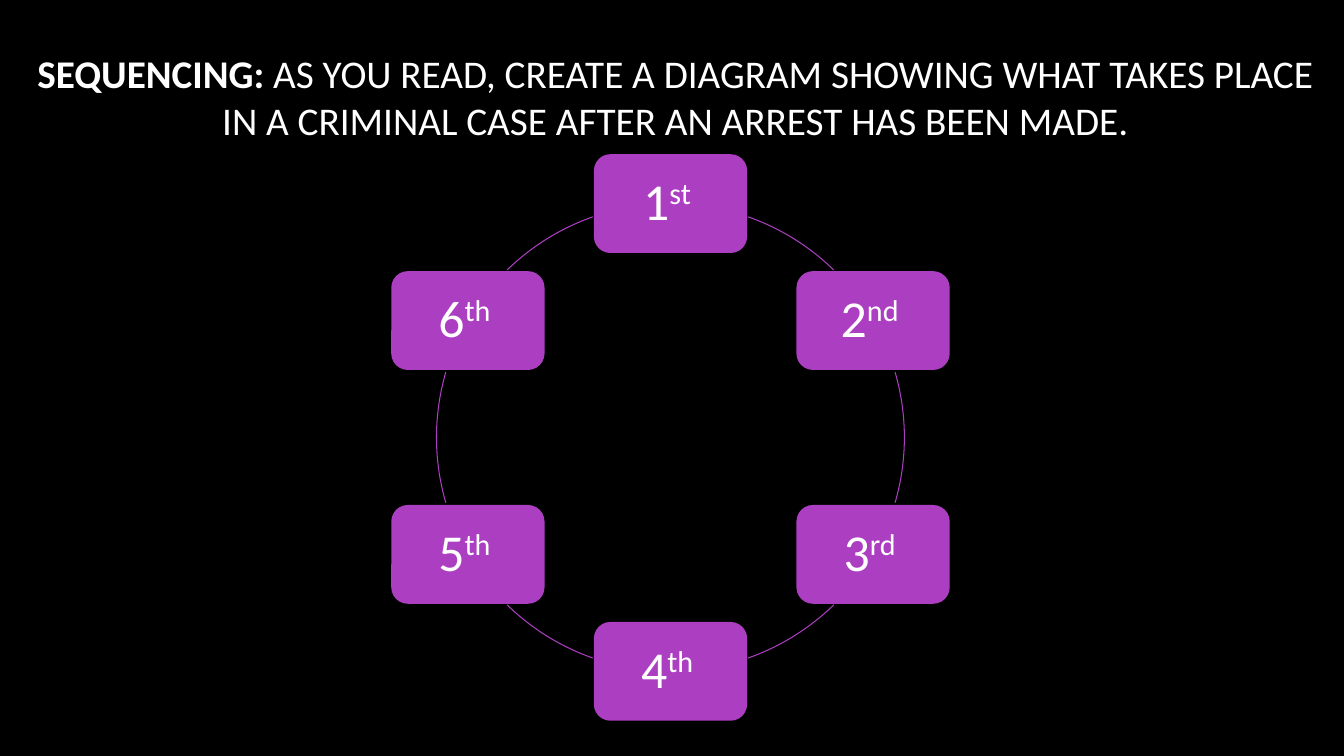
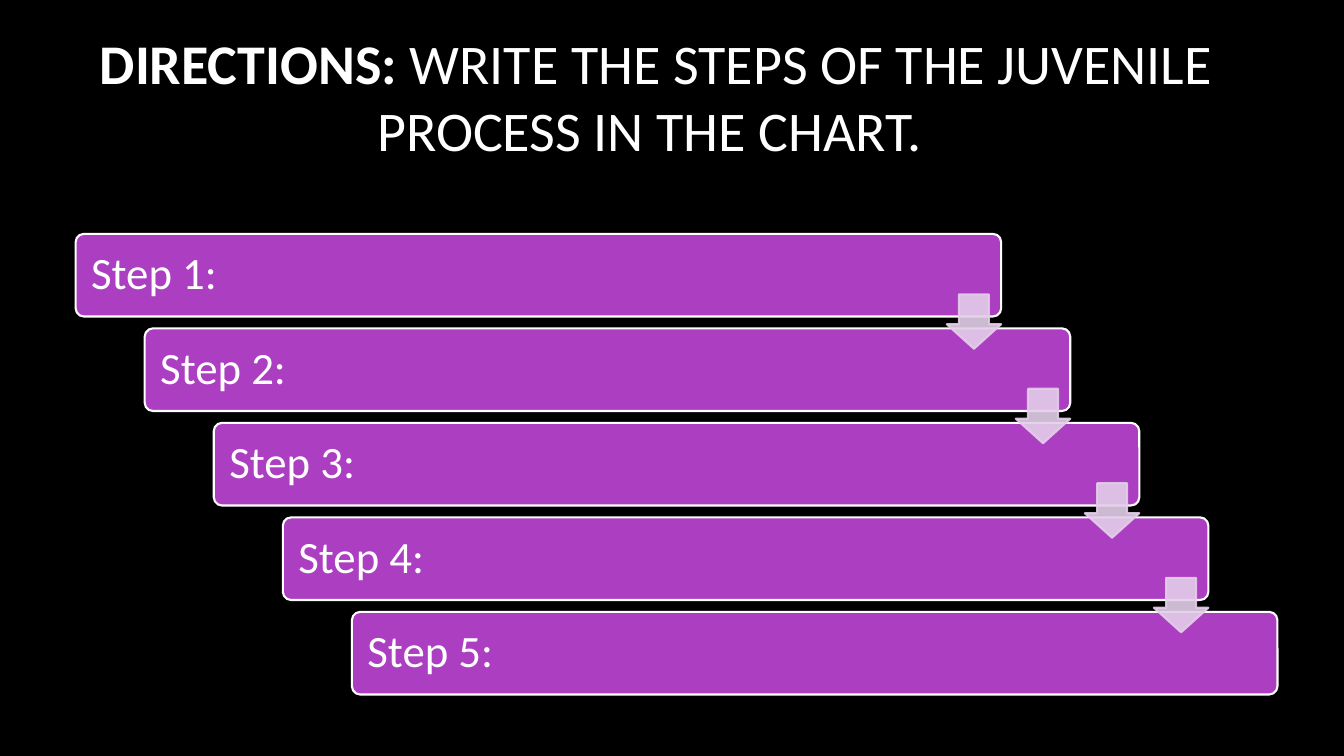
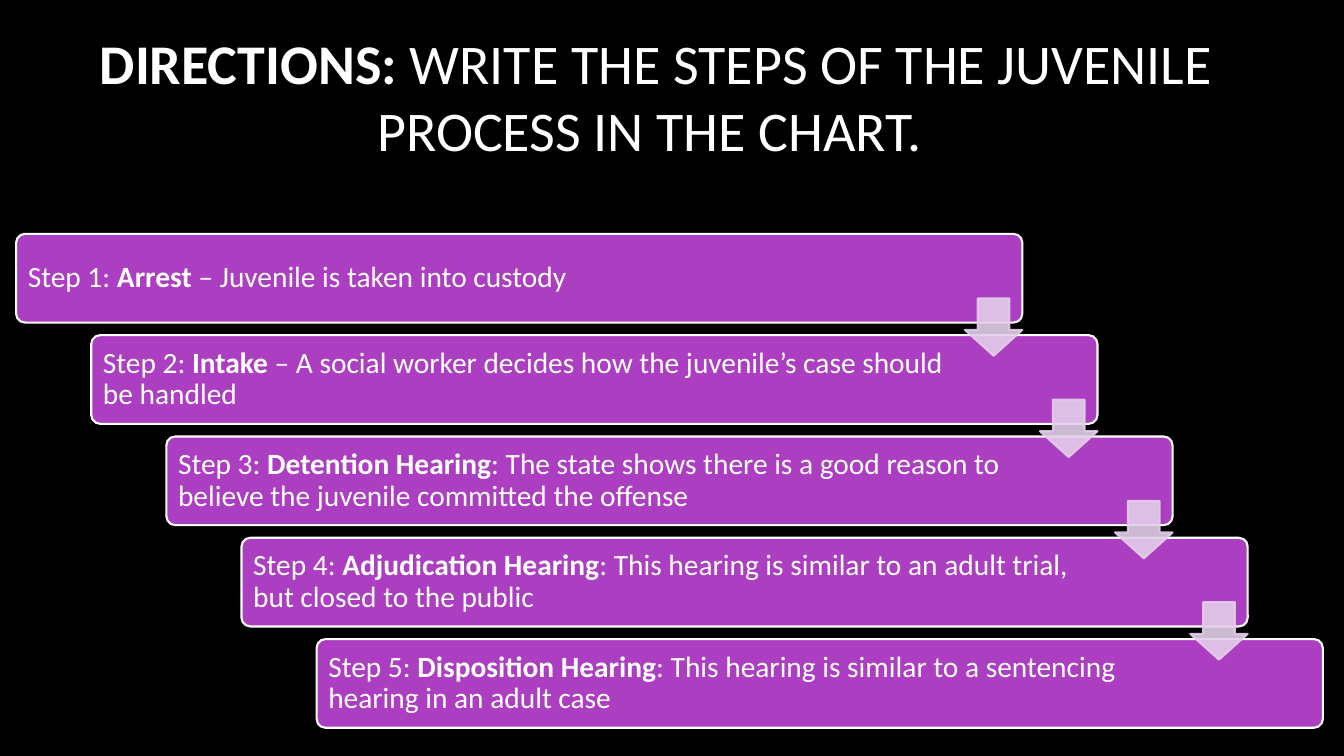
"""Build three slides on the order of steps in criminal and juvenile cases."""
from math import cos, radians, sin

from lxml import etree
from pptx import Presentation
from pptx.dml.color import RGBColor
from pptx.enum.shapes import MSO_SHAPE
from pptx.enum.text import MSO_ANCHOR, PP_ALIGN
from pptx.oxml.ns import qn
from pptx.util import Inches, Pt

BLACK = RGBColor(0x00, 0x00, 0x00)
WHITE = RGBColor(0xFF, 0xFF, 0xFF)
PURPLE = RGBColor(0xAC, 0x3E, 0xC1)
LILAC = RGBColor(0xE3, 0xCE, 0xE9)
FONT = "Calibri"
LEFT, CENTER = PP_ALIGN.LEFT, PP_ALIGN.CENTER
MIDDLE = MSO_ANCHOR.MIDDLE
ROUND, ARC, ARROW = MSO_SHAPE.ROUNDED_RECTANGLE, MSO_SHAPE.ARC, MSO_SHAPE.DOWN_ARROW

RING_TITLE = [
    ("SEQUENCING: ", True),
    ("AS YOU READ, CREATE A DIAGRAM SHOWING WHAT TAKES PLACE "
     "IN A CRIMINAL CASE AFTER AN ARREST HAS BEEN MADE.", False),
]
STAIR_TITLE = [
    ("DIRECTIONS: ", True),
    ("WRITE THE STEPS OF THE JUVENILE PROCESS IN THE CHART. ", False),
]
RANKS = [("1", "st "), ("2", "nd "), ("3", "rd "),
         ("4", "th "), ("5", "th "), ("6", "th ")]
SPANS = [(289.4, 314.3), (343.8, 16.2), (45.7, 70.6),
         (109.4, 134.3), (163.8, 196.2), (225.7, 250.6)]
RING = {"x": 6.65, "y": 4.34, "radius": 2.32, "width": 1.52, "height": 0.98}

PLAIN = [[(f"Step {num}:", False)] for num in range(1, 6)]
NAMED = [
    [(f"Step {num}: ", False), (name, True), (rest, False)]
    for num, (name, rest) in enumerate([
        ("Arrest", " – Juvenile is taken into custody"),
        ("Intake", " – A social worker decides how the juvenile’s case "
                   "should be handled"),
        ("Detention Hearing", ": The state shows there is a good reason to "
                              "believe the juvenile committed the offense"),
        ("Adjudication Hearing", ": This hearing is similar to an adult "
                                 "trial, but closed to the public"),
        ("Disposition Hearing", ": This hearing is similar to a sentencing "
                                "hearing in an adult case"),
    ], 1)
]
STAIRS = [
    {"steps": PLAIN, "first": (0.75, 2.32), "last": (3.49, 6.07),
     "box": (9.18, 0.82), "size": 32, "pad": 0.13, "right": 1.08,
     "arrow": 0.54, "drop": 0.6},
    {"steps": NAMED, "first": (0.16, 2.32), "last": (3.14, 6.34),
     "box": (9.98, 0.88), "size": 21, "pad": 0.09, "right": 1.41,
     "arrow": 0.57, "drop": 0.64},
]


def write(shape, parts, size, align):
    """Fill a shape with one paragraph and return its runs."""
    frame = shape.text_frame
    frame.word_wrap = True
    frame.vertical_anchor = MIDDLE
    para = frame.paragraphs[0]
    para.alignment = align
    para.font.name = FONT
    para.font.size = Pt(size)
    para.font.color.rgb = WHITE
    for text, bold in parts:
        run = para.add_run()
        run.text = text
        run.font.bold = bold
    return para.runs


def pad(shape, inset, right):
    """Set the margins and line spacing of a diagram box."""
    frame = shape.text_frame
    frame.margin_left = frame.margin_top = frame.margin_bottom = Inches(inset)
    frame.margin_right = Inches(right)
    frame.paragraphs[0].line_spacing = 0.9


def draw(slide, kind, place, fill=None, line=None, weight=1.5, adjust=()):
    """Add a preset shape without shadow."""
    shape = slide.shapes.add_shape(kind, *map(Inches, place))
    shape.shadow.inherit = False
    for index, value in enumerate(adjust):
        shape.adjustments[index] = value
    if fill is None:
        shape.fill.background()
    else:
        shape.fill.solid()
        shape.fill.fore_color.rgb = fill
    if line is None:
        shape.line.fill.background()
    else:
        shape.line.color.rgb = line
        shape.line.width = Pt(weight)
    return shape


def start(deck, parts, place, size):
    """Add a black slide with its title."""
    slide = deck.slides.add_slide(deck.slide_layouts[6])
    slide.background.fill.solid()
    slide.background.fill.fore_color.rgb = BLACK
    write(slide.shapes.add_textbox(*map(Inches, place)), parts, size, CENTER)
    return slide


def add_ring(slide):
    """Draw six ranked boxes joined by arcs of one circle."""
    x, y, radius, width, height = RING.values()
    for index, (rank, span) in enumerate(zip(RANKS, SPANS)):
        angle = radians(60 * index - 90)
        left = x + radius * cos(angle) - width / 2
        top = y + radius * sin(angle) - height / 2
        box = draw(slide, ROUND, (left, top, width, height), PURPLE)
        runs = write(box, [(text, False) for text in rank], 37, CENTER)
        runs[1].font._element.set("baseline", "30000")
        pad(box, 0.15, 0.15)
        draw(slide, ARC, (x - radius, y - radius, 2 * radius, 2 * radius),
             line=PURPLE, weight=0.75, adjust=[turn * 0.6 for turn in span])


def add_stairs(slide, stair):
    """Draw the steps going down to the right, then the arrows between."""
    steps = stair["steps"]
    width, height = stair["box"]
    gaps = len(steps) - 1
    spots = [[a + (b - a) * index / gaps
              for a, b in zip(stair["first"], stair["last"])]
             for index in range(len(steps))]
    for parts, (left, top) in zip(steps, spots):
        box = draw(slide, ROUND, (left, top, width, height), PURPLE, WHITE, adjust=[0.1])
        write(box, parts, stair["size"], LEFT)
        pad(box, stair["pad"], stair["right"])
    side = stair["arrow"]
    for left, top in spots[:-1]:
        place = (left + width - side, top + stair["drop"], side, side)
        arrow = draw(slide, ARROW, place, LILAC, LILAC, adjust=[0.55, 0.45])
        for color in arrow._element.spPr.iter(qn("a:srgbClr")):
            etree.SubElement(color, qn("a:alpha")).set("val", "90000")


def main():
    """Make and save the deck."""
    deck = Presentation()
    deck.slide_width, deck.slide_height = Inches(13.33), Inches(7.5)
    add_ring(start(deck, RING_TITLE, (0.25, 0.16, 12.89, 1.59), 28))
    for stair in STAIRS:
        slide = start(deck, STAIR_TITLE, (0.47, 0.28, 12.07, 1.33), 40)
        add_stairs(slide, stair)
    deck.save("out.pptx")


if __name__ == "__main__":
    main()
